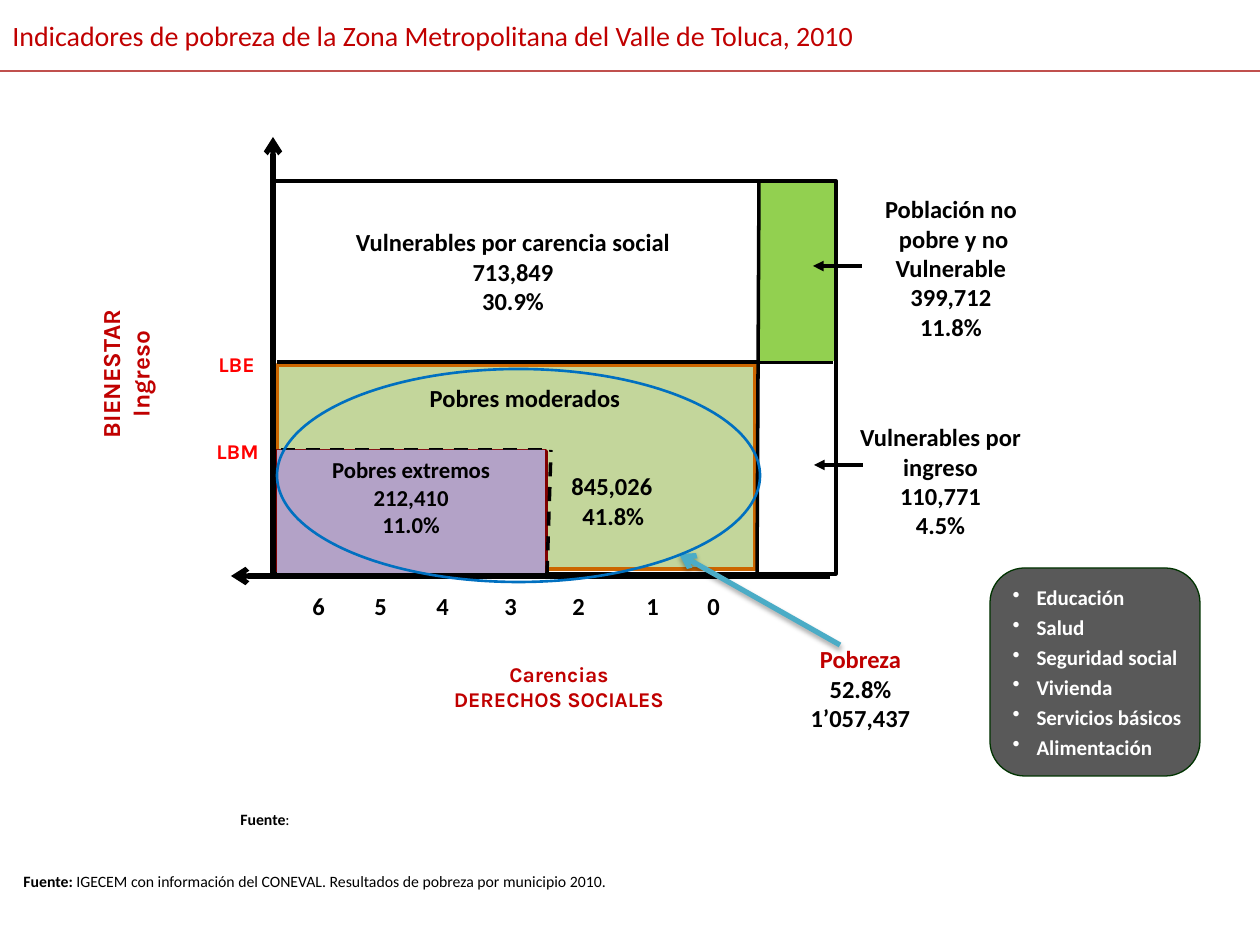
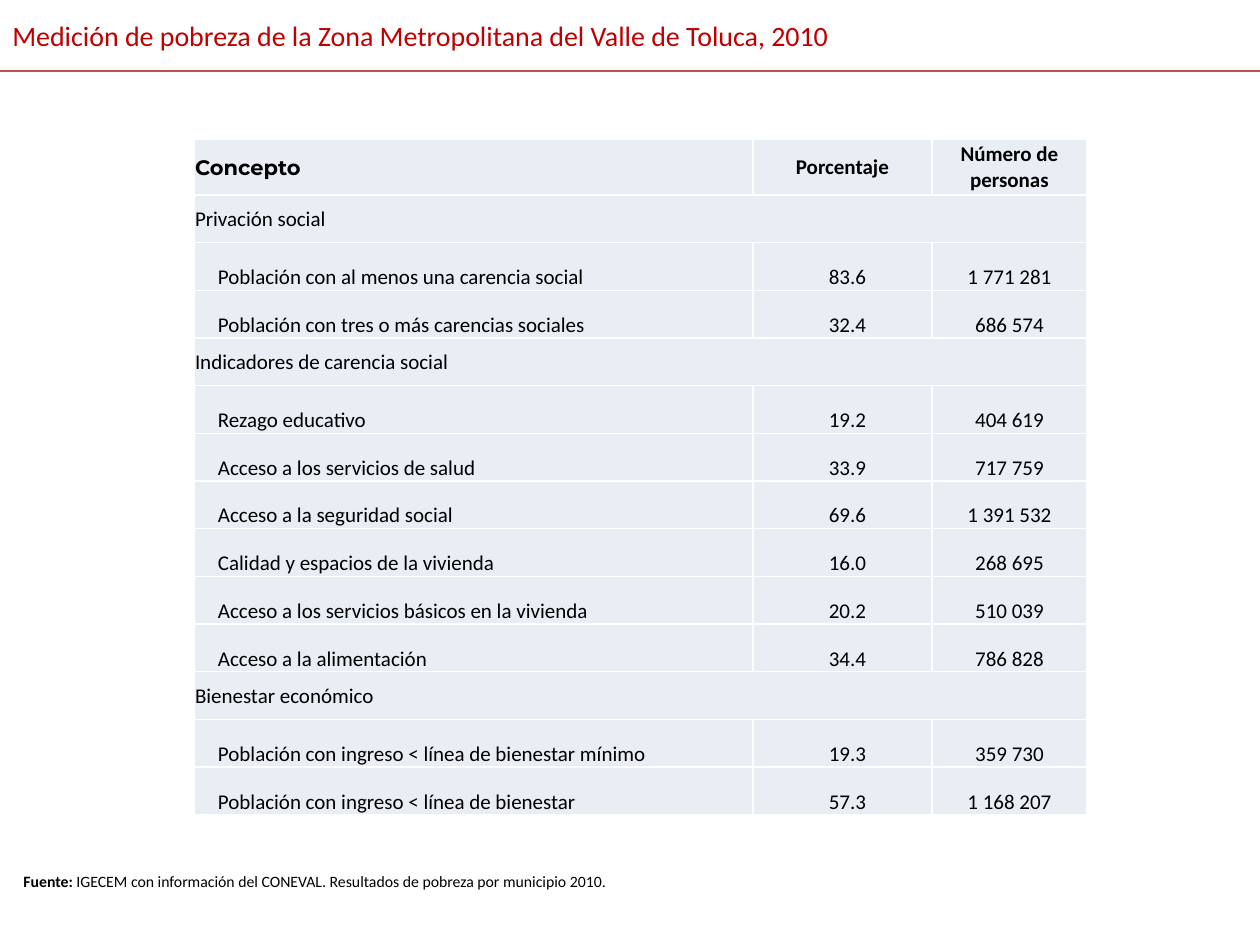
import collections

import lxml.etree
import pptx
import pptx.dml.color
import pptx.enum.dml
import pptx.enum.shapes
import pptx.enum.text
import pptx.oxml
import pptx.oxml.ns
import pptx.util

RGB = pptx.dml.color.RGBColor
ALIGN = pptx.enum.text.PP_ALIGN
ANCHOR = pptx.enum.text.MSO_ANCHOR
SHAPE = pptx.enum.shapes.MSO_SHAPE
DASH = pptx.enum.dml.MSO_LINE.DASH
Pt = pptx.util.Pt

BLACK, WHITE = RGB(0, 0, 0), RGB(255, 255, 255)
DARK_RED, RED, RULE_RED = RGB(0xC0, 0, 0), RGB(255, 0, 0), RGB(0xC0, 0x50, 0x4D)
MAROON, PURPLE = RGB(0x80, 0, 0), RGB(0xB3, 0xA2, 0xC7)
OLIVE, ORANGE = RGB(0xC3, 0xD6, 0x9B), RGB(0xCC, 0x66, 0)
GREEN, DARK_GREEN = RGB(0x92, 0xD0, 0x50), RGB(0, 0x33, 0)
BLUE, TEAL = RGB(0, 0x70, 0xC0), RGB(0x4B, 0xAC, 0xC6)
GREY, CELL_FILL = RGB(0x59, 0x59, 0x59), RGB(0xE9, 0xED, 0xF4)

BODY_FONT, AXIS_FONT, HEAD_FONT = "Calibri", "Karla", "Montserrat"
PX_PER_INCH = 126
SLIDE_WIDTH, SLIDE_HEIGHT = 1260, 945
Box = collections.namedtuple("Box", "left top width height")

RIGHTS = ("Educación", "Salud", "Seguridad social", "Vivienda", "Servicios básicos", "Alimentación")
DEPRIVATION_STOPS = (62, 124, 192, 260, 334, 395)
COLUMN_WIDTHS = (559, 179, 155)
TABLE_ROWS = (
    ("Concepto", "Porcentaje", "Número de personas"),
    ("Privación social",),
    ("Población con al menos una carencia social", "83.6", "1 771 281"),
    ("Población con tres o más carencias sociales", "32.4", "686 574"),
    ("Indicadores de carencia social",),
    ("Rezago educativo", "19.2", "404 619"),
    ("Acceso a los servicios de salud", "33.9", "717 759"),
    ("Acceso a la seguridad social", "69.6", "1 391 532"),
    ("Calidad y espacios de la vivienda", "16.0", "268 695"),
    ("Acceso a los servicios básicos en la vivienda", "20.2", "510 039"),
    ("Acceso a la alimentación", "34.4", "786 828"),
    ("Bienestar económico",),
    ("Población con ingreso < línea de bienestar mínimo", "19.3", "359 730"),
    ("Población con ingreso < línea de bienestar", "57.3", "1 168 207"),
)


def px(length):
    """Turn pixels into EMU."""
    return pptx.util.Emu(round(length * 914400 / PX_PER_INCH))


def within(box, left, top, width, height):
    """Return a box whose place is counted from the corner of another."""
    return Box(box.left + left, box.top + top, width, height)


def add_xml(parent, tag, **attributes):
    """Append a DrawingML element to a parent."""
    element = lxml.etree.SubElement(parent, pptx.oxml.ns.qn(tag))
    for name, value in attributes.items():
        element.set(name, str(value))
    return element


def set_indent(paragraph, margin, first_line=0):
    """Set the left margin and first line indent of a paragraph."""
    properties = paragraph._p.get_or_add_pPr()
    properties.set("marL", str(px(margin)))
    properties.set("indent", str(px(first_line)))
    return properties


def style_paragraph(paragraph, size, color=BLACK, bold=False, align=ALIGN.LEFT, font=BODY_FONT):
    """Set the font and alignment of a paragraph."""
    paragraph.alignment = align
    paragraph.font.size = Pt(size)
    paragraph.font.bold = bold
    paragraph.font.name = font
    paragraph.font.color.rgb = color


def fill_text(frame, lines, size, **style):
    """Write one paragraph per line and return the paragraphs."""
    frame.text = "\n".join(lines)
    for paragraph in frame.paragraphs:
        style_paragraph(paragraph, size, **style)
    return frame.paragraphs


def add_text(slide, box, lines, size, rotation=0, **style):
    """Add a wrapping text box and return its paragraphs."""
    shape = slide.shapes.add_textbox(*map(px, box))
    shape.rotation = rotation
    shape.text_frame.word_wrap = True
    shape.text_frame.auto_size = pptx.enum.text.MSO_AUTO_SIZE.SHAPE_TO_FIT_TEXT
    return fill_text(shape.text_frame, lines, size, **style)


def add_area(slide, box, fill=None, line=None, width=2, kind=SHAPE.RECTANGLE):
    """Add a flat preset shape with optional fill and outline."""
    shape = slide.shapes.add_shape(kind, *map(px, box))
    shape.shadow.inherit = False
    for fill_format, color in ((shape.fill, fill), (shape.line.fill, line)):
        if color is None:
            fill_format.background()
        else:
            fill_format.solid()
            fill_format.fore_color.rgb = color
    if line is not None:
        shape.line.width = Pt(width)
    return shape


def add_line(slide, box, start, end, color=BLACK, width=2, dash=None, head=None, tail=None):
    """Add a straight line between two points of a box and return its effect list."""
    ends = [px(origin + offset) for point in (start, end) for origin, offset in zip(box, point)]
    connector = slide.shapes.add_connector(pptx.enum.shapes.MSO_CONNECTOR.STRAIGHT, *ends)
    connector.line.color.rgb = color
    connector.line.width = Pt(width)
    if dash is not None:
        connector.line.dash_style = dash
    for tag, arrow in (("a:headEnd", head), ("a:tailEnd", tail)):
        if arrow:
            add_xml(connector.line._ln, tag, type=arrow)
    return add_xml(connector._element.spPr, "a:effectLst")


def draw_title(slide, box, title):
    """Draw the slide title and the rule below it."""
    paragraph, = add_text(slide, within(box, 0, 11, box.width, 48), [title], 16, color=DARK_RED)
    paragraph.line_spacing = 1.05
    add_line(slide, box, (0, box.height), (box.width, box.height), RULE_RED, 1.5)


def draw_source(slide, box, label, source):
    """Draw a source note with a bold label and a hanging indent."""
    paragraph, = add_text(slide, box, [label], 9)
    paragraph.runs[0].font.bold = True
    paragraph.add_run().text = source
    set_indent(paragraph, 55, -55)


def draw_quadrants(slide, box):
    """Draw the population areas, poverty lines and axes."""
    add_area(slide, within(box, 4, 184, 478, 204), OLIVE, ORANGE)
    add_line(slide, box, (4, 181), (560, 181))
    add_area(slide, within(box, 3, 270, 270, 123), MAROON, MAROON)
    add_line(slide, box, (274, 394), (278, 269), dash=DASH)
    add_line(slide, box, (8, 269), (275, 269), dash=DASH)
    add_line(slide, box, (557, 395), (-42, 395), width=3, tail="arrow")
    add_area(slide, within(box, 486, 2, 77, 178), GREEN)
    add_area(slide, box, line=BLACK)
    add_line(slide, box, (484, 395), (486, 2))
    extreme = add_area(slide, within(box, 4, 269, 268, 123), PURPLE)
    extreme.text_frame.vertical_anchor = ANCHOR.TOP
    fill_text(extreme.text_frame, ("Pobres extremos", "212,410", "11.0%"), 13,
              bold=True, align=ALIGN.CENTER)
    add_line(slide, box, (0, 396), (0, -44), width=3, tail="arrow")
    for left, top in ((540, 85), (541, 284)):
        add_line(slide, box, (left, top), (left + 49, top), head="triangle")


def draw_poverty_callout(slide, box):
    """Circle the poor population and point to it from its total."""
    effects = add_line(slide, box, (567, 464), (406, 373), TEAL, 3, tail="arrow")
    shadow = add_xml(effects, "a:outerShdw", blurRad=Pt(3.1), dist=Pt(1.8), dir=90 * 60000, rotWithShape=0)
    add_xml(add_xml(shadow, "a:srgbClr", val=BLACK), "a:alpha", val=35000)
    total = add_text(slide, within(box, 491, 457, 193, 102), ("Pobreza", "52.8%", "1’057,437"), 14,
                     bold=True, align=ALIGN.CENTER)
    total[0].font.color.rgb = DARK_RED
    add_area(slide, within(box, 4, 188, 483, 213), line=BLUE, width=1.5, kind=SHAPE.OVAL)


def draw_labels(slide, box):
    """Write the names and values of the areas and axes."""
    areas = (
        ((596, 7, 164, 161), ("Población no", " pobre y no", "Vulnerable", "399,712", "11.8%")),
        ((571, 235, 193, 131), ("Vulnerables por ingreso", "110,771", "4.5%")),
        ((22, 40, 436, 102), ("Vulnerables por carencia social", "713,849", "30.9%")),
        ((143, 196, 218, 43), ("Pobres moderados",)),
    )
    for place, lines in areas:
        add_text(slide, within(box, *place), lines, 14, bold=True, align=ALIGN.CENTER)
    moderate = add_text(slide, within(box, 286, 284, 281, 72), ("845,026", "41.8%"), 14, bold=True)
    set_indent(moderate[1], 11)

    axes = (
        ((29, 474, 514, 63), ("Carencias", "DERECHOS SOCIALES"), 12, 0, DARK_RED),
        ((-279, 157, 263, 72), ("BIENESTAR", "Ingreso"), 14, 270, DARK_RED),
        ((-75, 251, 79, 38), ("LBM",), 12, 0, RED),
        ((-76, 164, 79, 38), ("LBE",), 12, 0, RED),
    )
    for place, lines, size, rotation, color in axes:
        add_text(slide, within(box, *place), lines, size, rotation,
                 color=color, bold=True, align=ALIGN.CENTER, font=AXIS_FONT)

    counts = "\t".join(str(count) for count in range(6, -1, -1))
    scale, = add_text(slide, within(box, 27, 404, 552, 42), [counts], 14, bold=True)
    stops = pptx.oxml.parse_xml("<a:tabLst %s/>" % pptx.oxml.ns.nsdecls("a"))
    for stop in DEPRIVATION_STOPS:
        add_xml(stops, "a:tab", pos=px(stop), algn="l")
    scale._p.get_or_add_pPr().insert(0, stops)


def draw_rights(slide, box):
    """Draw the rounded panel that lists the social rights."""
    panel = add_area(slide, box, GREY, DARK_GREEN, 0.75, SHAPE.ROUNDED_RECTANGLE)
    panel.text_frame.word_wrap = False
    panel.text_frame.vertical_anchor = ANCHOR.MIDDLE
    for paragraph in fill_text(panel.text_frame, RIGHTS, 12, color=WHITE, bold=True):
        paragraph.space_before = Pt(2.7)
        properties = set_indent(paragraph, 24, -24)
        bullet = pptx.oxml.parse_xml('<a:buChar %s char="•"/>' % pptx.oxml.ns.nsdecls("a"))
        properties.insert(list(properties).index(properties.find(pptx.oxml.ns.qn("a:defRPr"))), bullet)


def style_cell(cell, left_margin, anchor):
    """Give a table cell its fill, insets and white borders."""
    cell.margin_left, cell.margin_right = px(left_margin), px(1)
    cell.margin_top, cell.margin_bottom = px(1), 0
    cell.vertical_anchor = anchor
    properties = cell._tc.get_or_add_tcPr()
    for side in ("a:lnL", "a:lnR", "a:lnT", "a:lnB"):
        border = add_xml(properties, side, w=Pt(1))
        add_xml(add_xml(border, "a:solidFill"), "a:srgbClr", val=WHITE)
    cell.fill.solid()
    cell.fill.fore_color.rgb = CELL_FILL


def draw_table(slide, box, header_height):
    """Draw the poverty table with its group rows merged."""
    table = slide.shapes.add_table(len(TABLE_ROWS), len(COLUMN_WIDTHS), *map(px, box)).table
    table.first_row = table.horz_banding = False
    for column, width in zip(table.columns, COLUMN_WIDTHS):
        column.width = px(width)
    row_height = (box.height - header_height) / (len(TABLE_ROWS) - 1)
    for row_index, values in enumerate(TABLE_ROWS):
        is_header, is_group = row_index == 0, len(values) == 1
        table.rows[row_index].height = px(header_height if is_header else row_height)
        is_data = not (is_header or is_group)
        for column_index in range(len(COLUMN_WIDTHS)):
            margin = (24, 11, 1)[column_index] if is_data else 1
            style_cell(table.cell(row_index, column_index), margin,
                       ANCHOR.BOTTOM if is_data else ANCHOR.MIDDLE)
        if is_group:
            table.cell(row_index, 0).merge(table.cell(row_index, len(COLUMN_WIDTHS) - 1))
        for column_index, value in enumerate(values):
            fill_text(table.cell(row_index, column_index).text_frame, [value], 12, bold=is_header,
                      align=ALIGN.CENTER if column_index else ALIGN.LEFT,
                      font=HEAD_FONT if is_header and column_index == 0 else BODY_FONT)


def add_slide(presentation, title):
    """Add a blank slide with the shared title and source note."""
    slide = presentation.slides.add_slide(presentation.slide_layouts[6])
    draw_title(slide, Box(0, 0, SLIDE_WIDTH, 71), title)
    draw_source(slide, Box(11, 866, 612, 50), "Fuente: ",
                "IGECEM con información del CONEVAL. Resultados de pobreza por municipio 2010.")
    return slide


def main():
    """Build both slides and save the presentation."""
    presentation = pptx.Presentation()
    presentation.slide_width, presentation.slide_height = px(SLIDE_WIDTH), px(SLIDE_HEIGHT)

    slide = add_slide(presentation, "Indicadores de pobreza de la Zona Metropolitana del Valle de Toluca, 2010")
    diagram = Box(273, 181, 563, 393)
    for draw in (draw_quadrants, draw_poverty_callout, draw_labels):
        draw(slide, diagram)
    draw_rights(slide, Box(990, 568, 210, 208))
    draw_source(slide, Box(228, 804, 693, 32), "Fuente", ":")

    slide = add_slide(presentation, "Medición de pobreza de la Zona Metropolitana del Valle de Toluca, 2010")
    draw_table(slide, Box(194, 139, sum(COLUMN_WIDTHS), 676), 56)
    presentation.save("out.pptx")


if __name__ == "__main__":
    main()
